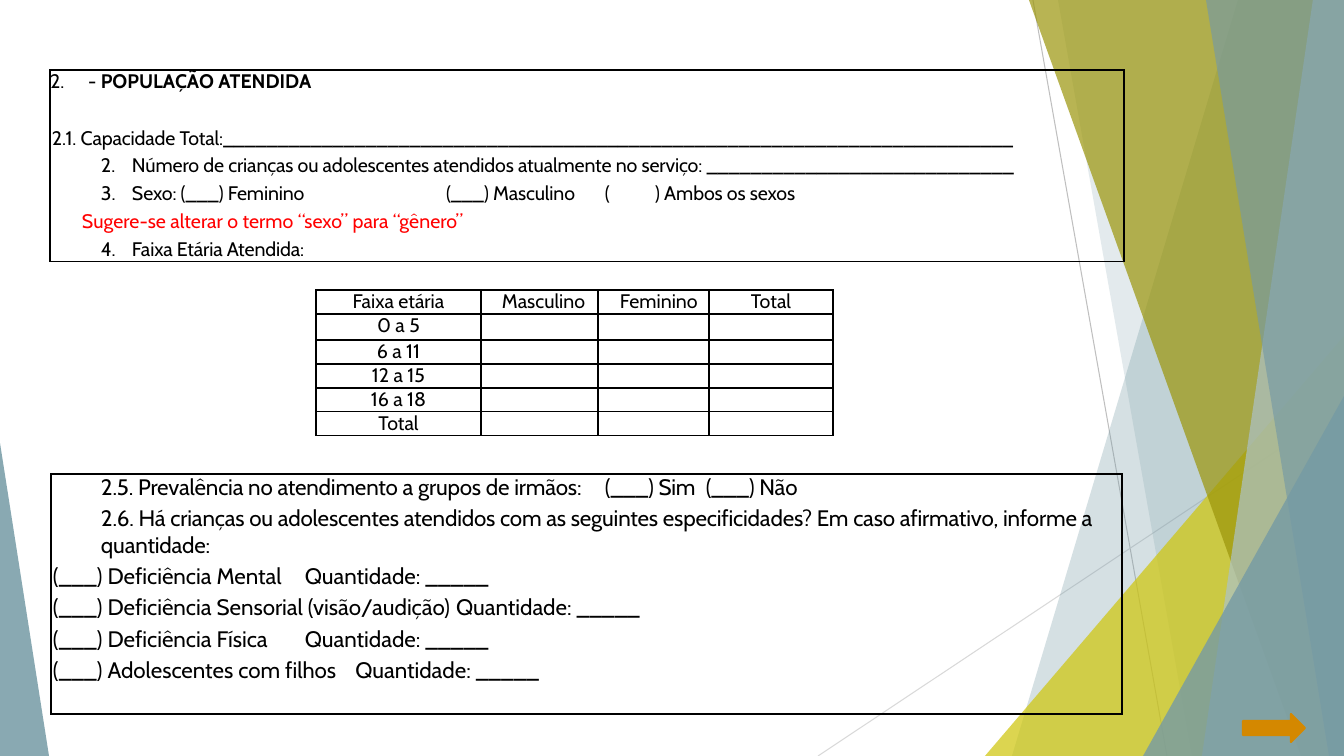
from pptx import Presentation
from pptx.dml.color import RGBColor as RGB
from pptx.enum.shapes import MSO_CONNECTOR as LINK, MSO_SHAPE as SHAPE
from pptx.enum.text import PP_ALIGN as ALIGN
from pptx.oxml.ns import qn
from pptx.util import Emu, Pt
from lxml.etree import SubElement as sub

SCALE = 914400 / 100.8
WIDE, HIGH = 1344, 756
FONT = "Cabin"
BLACK = RGB(0, 0, 0)
RED = RGB(0xFF, 0, 0)
TEAL = RGB(0x75, 0x9A, 0xA5)
PALE = RGB(0xAC, 0xC2, 0xC9)
LIME = RGB(0xCF, 0xC6, 0x0D)
OLIVE = RGB(0x9B, 0x95, 0x0A)
ORANGE = RGB(0xD4, 0x88, 0)
GREY = RGB(0xBF, 0xBF, 0xBF)
SILVER = RGB(0xD9, 0xD9, 0xD9)


def px(n):
    return Emu(round(n * SCALE))


def paint(shape, color, alpha=100):
    shape.shadow.inherit = False
    shape.fill.solid()
    shape.fill.fore_color.rgb = color
    shape.line.fill.background()
    if alpha < 100:
        tint = shape._element.spPr.find(".//" + qn("a:srgbClr"))
        sub(tint, qn("a:alpha"), val=str(alpha * 1000))


def line(slide, start, end, color):
    link = slide.shapes.add_connector(LINK.STRAIGHT, *map(px, start + end))
    link.line.color.rgb = color
    link.line.width = Pt(0.75)
    sub(link._element.spPr, qn("a:effectLst"))


def shard(slide, top, foot, color, alpha):
    """A band from the slanted edge top-foot to the right side."""
    pen = slide.shapes.build_freeform(px(top), 0, scale=1.0)
    pen.add_line_segments([(px(WIDE), 0), (px(WIDE), px(HIGH)),
                           (px(foot), px(HIGH))], close=True)
    paint(pen.convert_to_shape(), color, alpha)


def wedge(slide, box, tip, color, alpha):
    shape = slide.shapes.add_shape(SHAPE.ISOSCELES_TRIANGLE, *map(px, box))
    shape.adjustments[0] = tip
    paint(shape, color, alpha)


def backdrop(slide):
    line(slide, (1033, 0), (1167, HIGH), GREY)
    line(slide, (WIDE, 406), (818, HIGH), SILVER)
    shard(slide, 1238, 1012, TEAL, 30)
    shard(slide, 1058, 1192, TEAL, 20)
    wedge(slide, (985, 336, 359, 420), 1, LIME, 72)
    shard(slide, 1029, 1301, OLIVE, 70)
    shard(slide, 1313, 1202, PALE, 70)
    shard(slide, 1206, 1329, TEAL, 65)
    wedge(slide, (1143, 396, 201, 360), 1, TEAL, 80)
    wedge(slide, (0, 443, 49, 313), 0, TEAL, 85)


def arrow(slide, box):
    shape = slide.shapes.add_shape(SHAPE.RIGHT_ARROW, *map(px, box))
    paint(shape, ORANGE)
    shape.line.color.rgb = ORANGE
    shape.line.width = Pt(1.5)


def style(para, size, color=BLACK, track=0):
    for run in para.runs:
        font = run.font
        font.name, font.size, font.color.rgb = FONT, Pt(size), color
        if track:
            run._r.get_or_add_rPr().set("spc", str(track))


def layout(para, left, hang=0, gap=0, start=0, tabs=(), right=0):
    para.space_before = Pt(gap)
    props = para._p.get_or_add_pPr()
    for name, size in (("marL", left), ("marR", right), ("indent", -hang)):
        props.set(name, str(px(size)))
    if start:
        sub(props, qn("a:buAutoNum"), type="arabicPeriod", startAt=str(start))
    if tabs:
        stops = sub(props, qn("a:tabLst"))
        for stop in tabs:
            sub(stops, qn("a:tab"), pos=str(px(stop)), algn="l")


def table(slide, left, top, cols, rows):
    """An unfilled table with thin black rules and no cell margins."""
    frame = slide.shapes.add_table(len(rows), len(cols), px(left), px(top),
                                   px(sum(cols)), px(sum(rows)))
    grid = frame.table
    grid.first_row = grid.horz_banding = False
    for col, size in zip(grid.columns, cols):
        col.width = px(size)
    for row, size in zip(grid.rows, rows):
        row.height = px(size)
    for cell in grid.iter_cells():
        cell.margin_left = cell.margin_right = 0
        cell.margin_top = cell.margin_bottom = 0
        props = cell._tc.get_or_add_tcPr()
        for side in "LRTB":
            edge = sub(props, qn("a:ln" + side), w=str(Pt(1)))
            fill = sub(edge, qn("a:solidFill"))
            sub(fill, qn("a:srgbClr"), val=str(BLACK))
        cell.fill.background()
    return grid


def form(slide, box, size, items):
    """A framed list of form lines: text, layout, level, colour, tracking."""
    left, top, wide, high = box
    frame = table(slide, left, top, [wide], [high]).cell(0, 0).text_frame
    for i, (text, place, level, color, track) in enumerate(items):
        para = frame.add_paragraph() if i else frame.paragraphs[0]
        para.text = text
        para.level = level
        layout(para, **place)
        style(para, size, color, track)
    return frame


def intake(slide, box):
    head = dict(left=38, hang=38, start=2, tabs=[14])
    item = dict(left=82, hang=31, gap=2.9, start=2)
    rows = [
        ("- ", head, 0, BLACK, 0),
        ("2.1. Capacidade Total:" + "_" * 72, dict(left=2, gap=23),
         0, BLACK, -10),
        ("Número de crianças ou adolescentes atendidos atualmente no serviço: "
         + "_" * 28, item, 1, BLACK, -10),
        ("Sexo: (___) Feminino\t(___) Masculino\t(\t) Ambos os sexos",
         dict(item, tabs=[396, 555, 605]), 1, BLACK, -10),
        ("Sugere-se alterar o termo “sexo” para “gênero”",
         dict(left=32, gap=2.9), 0, RED, 0),
        ("Faixa Etária Atendida:", item, 1, BLACK, -10),
    ]
    title = form(slide, box, 14, rows).paragraphs[0]
    title.add_run().text = "POPULAÇÃO ATENDIDA"
    style(title, 14)
    title.runs[1].font.bold = True


def ages(slide, left, top):
    heads = ["Faixa etária", "Masculino", "Feminino", "Total"]
    bands = ["0 a 5", "6 a 11", "12 a 15", "16 a 18", "Total"]
    grid = table(slide, left, top, [165, 117, 111, 124],
                 [24, 26, 24, 24, 24, 24])
    for r, words in enumerate([heads] + [[band, "", "", ""] for band in bands]):
        for c, word in enumerate(words):
            para = grid.cell(r, c).text_frame.paragraphs[0]
            if not word:
                para.font.size = Pt(10)
                continue
            para.text = word
            mid = c in (0, 3)
            inset = (30, 21, 22, 40)[c]
            layout(para, inset, right=inset if mid else 0)
            para.alignment = ALIGN.CENTER if mid else ALIGN.LEFT
            style(para, 14)


def needs(slide, box):
    kinds = ["Deficiência Mental", "Deficiência Sensorial (visão/audição)",
             "Deficiência Física", "Adolescentes com filhos"]
    rows = [
        ("2.5. Prevalência no atendimento a grupos de irmãos:\t(___) Sim\t(___) Não",
         dict(left=50, gap=1.2, tabs=[554, 655]), 1, BLACK, -10),
        ("2.6. Há crianças ou adolescentes atendidos com as seguintes "
         "especificidades? Em caso afirmativo, informe a quantidade:",
         dict(left=50, gap=2.9), 1, BLACK, -10),
    ]
    rows += [(f"(___) {kind}\tQuantidade: _____",
              dict(left=2, gap=2.9, tabs=[298, 404]), 0, BLACK, 0)
             for kind in kinds]
    form(slide, box, 16, rows)


def main():
    deck = Presentation()
    deck.slide_width, deck.slide_height = px(WIDE), px(HIGH)
    slide = deck.slides.add_slide(deck.slide_layouts[6])
    backdrop(slide)
    arrow(slide, (1243, 714, 62, 28))
    intake(slide, (50, 70, 1074, 191))
    ages(slide, 316, 290)
    needs(slide, (51, 474, 1071, 240))
    deck.save("out.pptx")


if __name__ == "__main__":
    main()
